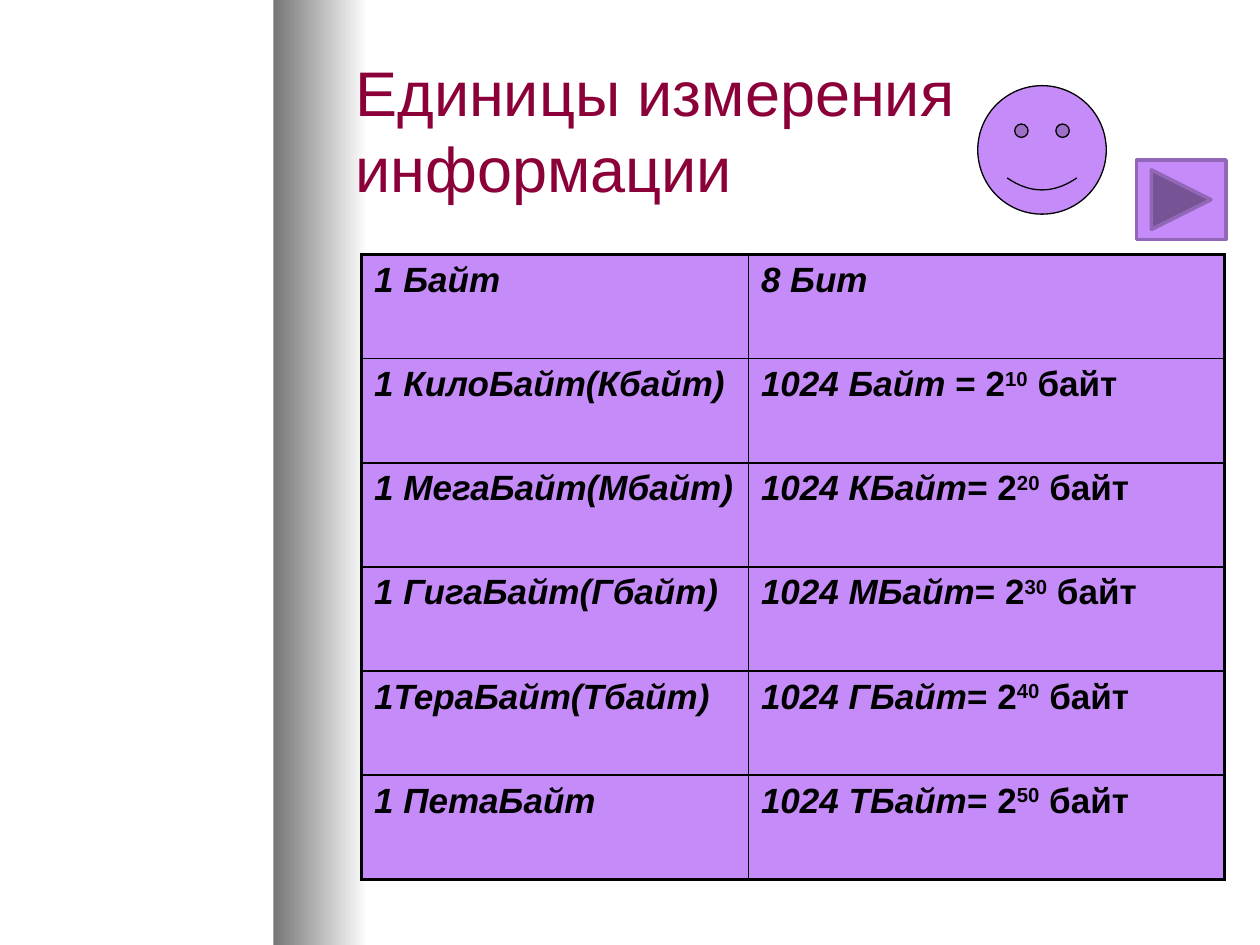
from lxml.etree import SubElement
from pptx import Presentation
from pptx.dml.color import RGBColor
from pptx.enum.shapes import MSO_SHAPE
from pptx.enum.text import MSO_ANCHOR, PP_ALIGN
from pptx.oxml.ns import qn
from pptx.util import Inches, Pt

BLACK = RGBColor(0x00, 0x00, 0x00)
WHITE = RGBColor(0xFF, 0xFF, 0xFF)
GRAY = RGBColor(0x76, 0x76, 0x76)
MAROON = RGBColor(0x8C, 0x00, 0x39)
LILAC = RGBColor(0xC5, 0x8B, 0xF9)
PURPLE = RGBColor(0x92, 0x67, 0xB8)

TITLE_FONT = {"name": "Arial", "size": Pt(36), "bold": False}
CELL_FONT = {"name": "Arial", "size": Pt(20), "bold": True}
TABLE_FORMAT = {"first_row": False, "horz_banding": False}
OUTER_WIDTH = Pt(2.25)
INNER_WIDTH = Pt(1)
COLUMN_WIDTHS = (3.07, 3.78)

UNITS = [
    ("1 Байт", "8 Бит", None),
    ("1 КилоБайт(Кбайт)", "1024 Байт ", 10),
    ("1 МегаБайт(Мбайт)", "1024 КБайт", 20),
    ("1 ГигаБайт(Гбайт)", "1024 МБайт", 30),
    ("1ТераБайт(Тбайт)", "1024 ГБайт", 40),
    ("1 ПетаБайт", "1024 ТБайт", 50),
]


def set_format(target, values):
    for name, value in values.items():
        setattr(target, name, value)


def add_title(slide, box):
    title = slide.shapes.title
    set_format(title, dict(zip(("left", "top", "width", "height"), map(Inches, box))))
    title.text_frame.text = "Единицы измерения информации"
    set_format(title.text_frame, {"vertical_anchor": MSO_ANCHOR.MIDDLE, "word_wrap": True})
    paragraph = title.text_frame.paragraphs[0]
    paragraph.alignment = PP_ALIGN.LEFT
    set_format(paragraph.font, TITLE_FONT)
    paragraph.font.color.rgb = MAROON


def add_side_strip(slide, box):
    strip = slide.shapes.add_shape(MSO_SHAPE.RECTANGLE, *map(Inches, box))
    strip.shadow.inherit = False
    strip.line.fill.background()
    strip.fill.gradient()
    strip.fill.gradient_angle = 0
    for stop, color in zip(strip.fill.gradient_stops, (GRAY, WHITE)):
        stop.color.rgb = color
    slide.shapes.title.element.addprevious(strip.element)


def add_lilac_shape(slide, kind, box, line_color, line_width):
    shape = slide.shapes.add_shape(kind, *map(Inches, box))
    shape.shadow.inherit = False
    shape.fill.solid()
    shape.fill.fore_color.rgb = LILAC
    shape.line.color.rgb = line_color
    shape.line.width = Pt(line_width)
    return shape


def add_run(paragraph, text, italic=False, superscript=False):
    run = paragraph.add_run()
    run.text = text
    set_format(run.font, CELL_FONT)
    run.font.italic = italic
    run.font.color.rgb = BLACK
    if superscript:
        run.font._element.set("baseline", "30000")


def style_cell(cell, outer_sides):
    properties = cell._tc.get_or_add_tcPr()
    for side in "LRTB":
        width = OUTER_WIDTH if side in outer_sides else INNER_WIDTH
        line = SubElement(properties, qn(f"a:ln{side}"), w=str(width))
        fill = SubElement(line, qn("a:solidFill"))
        SubElement(fill, qn("a:srgbClr"), val=str(BLACK))
    cell.fill.solid()
    cell.fill.fore_color.rgb = LILAC


def add_units_table(slide, box):
    frame = slide.shapes.add_table(len(UNITS), len(COLUMN_WIDTHS), *map(Inches, box))
    table = frame.table
    set_format(table, TABLE_FORMAT)
    for column, width in zip(table.columns, COLUMN_WIDTHS):
        column.width = Inches(width)
    for index, (unit, amount, power) in enumerate(UNITS):
        vertical = {0: "T", len(UNITS) - 1: "B"}.get(index, "")
        for column, (text, side) in enumerate(((unit, "L"), (amount, "R"))):
            cell = table.cell(index, column)
            style_cell(cell, side + vertical)
            add_run(cell.text_frame.paragraphs[0], text, italic=True)
        if power:
            paragraph = table.cell(index, 1).text_frame.paragraphs[0]
            add_run(paragraph, "= 2")
            add_run(paragraph, str(power), superscript=True)
            add_run(paragraph, " байт")


def main():
    presentation = Presentation()
    presentation.slide_width = Inches(10)
    presentation.slide_height = Inches(7.5)
    slide = presentation.slides.add_slide(presentation.slide_layouts[5])
    add_title(slide, (2.72, 0.36, 7, 1.33))
    add_side_strip(slide, (2.17, 0, 0.75, 7.5))
    add_units_table(slide, (2.87, 2.02, 6.85, 4.96))
    smiley = add_lilac_shape(
        slide, MSO_SHAPE.SMILEY_FACE, (7.76, 0.68, 1.02, 1.02), BLACK, 0.75)
    smiley.adjustments[0] = 0.05
    add_lilac_shape(
        slide, MSO_SHAPE.ACTION_BUTTON_FORWARD_OR_NEXT,
        (9.02, 1.27, 0.71, 0.63), PURPLE, 2)
    presentation.save("out.pptx")


if __name__ == "__main__":
    main()
